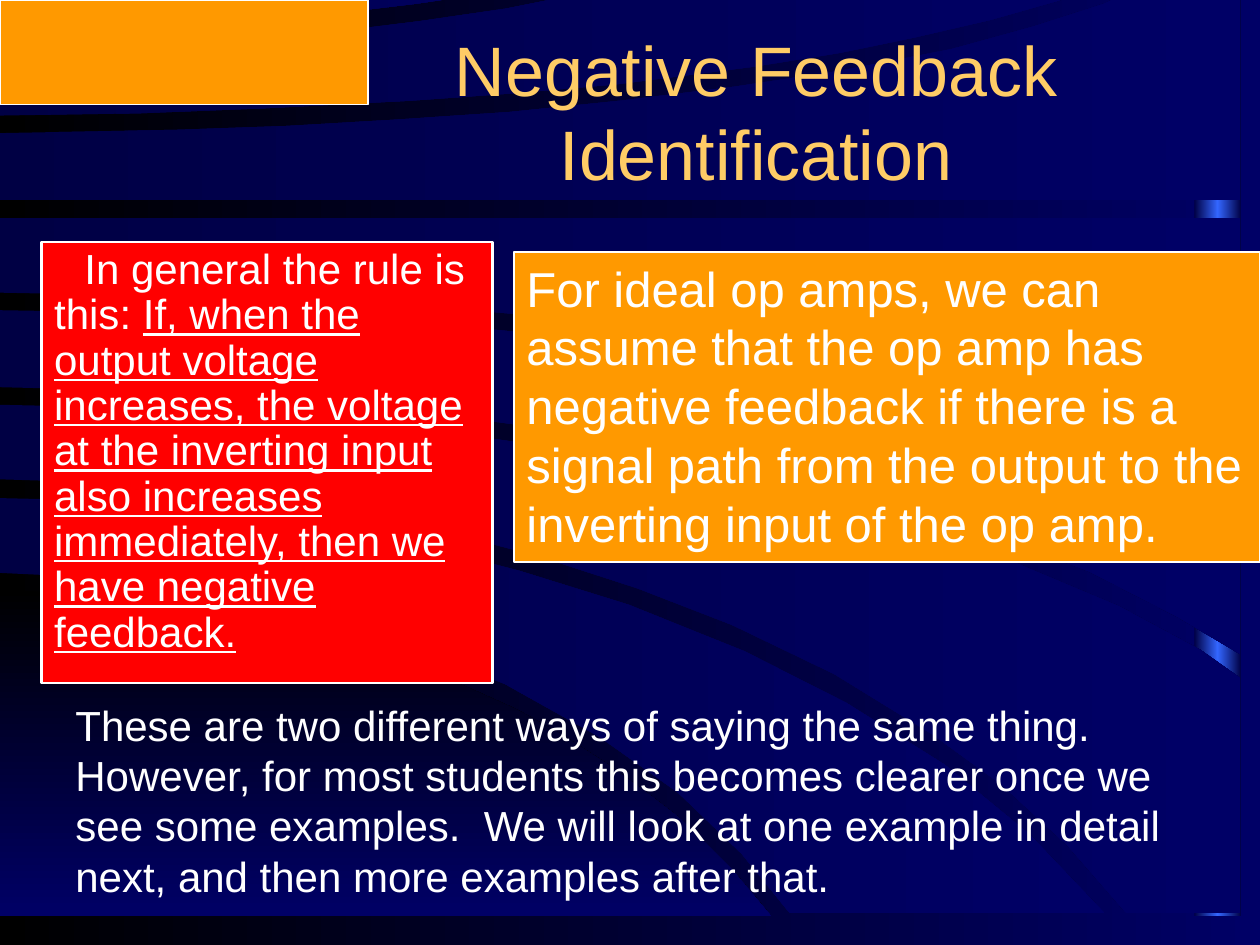
from copy import deepcopy

from pptx import Presentation
from pptx.dml.color import RGBColor
from pptx.enum.shapes import MSO_SHAPE
from pptx.enum.text import MSO_ANCHOR, MSO_AUTO_SIZE, PP_ALIGN
from pptx.oxml.ns import qn
from pptx.util import Inches, Pt

RECTANGLE = MSO_SHAPE.RECTANGLE
MIDDLE, TOP = MSO_ANCHOR.MIDDLE, MSO_ANCHOR.TOP
FIXED, GROW = MSO_AUTO_SIZE.NONE, MSO_AUTO_SIZE.SHAPE_TO_FIT_TEXT
CENTER, LEFT = PP_ALIGN.CENTER, PP_ALIGN.LEFT

BLACK = RGBColor(0x00, 0x00, 0x00)
NAVY = RGBColor(0x00, 0x00, 0x66)
DEEP_NAVY = RGBColor(0x00, 0x00, 0x44)
BLUE = RGBColor(0x33, 0x66, 0xFF)
ORANGE = RGBColor(0xFF, 0x99, 0x00)
RED = RGBColor(0xFF, 0x00, 0x00)
WHITE = RGBColor(0xFF, 0xFF, 0xFF)
GOLD = RGBColor(0xFF, 0xCC, 0x66)
FONT = "Arial"
DOWNWARD = 270  # gradient angles run counter-clockwise
UNITS = 100  # outline units per inch, which are whole numbers

# Content: each text is a list of (words, underlined)
TITLE = [("Negative Feedback Identification", False)]
RULE = [
    ("In general the rule is this: ", False),
    ("If, when the output voltage increases, the voltage at the inverting "
     "input also increases immediately, then we have negative feedback.", True),
]
IDEAL = [("For ideal op amps, we can assume that the op amp has negative "
          "feedback if there is a signal path from the output to the "
          "inverting input of the op amp.", False)]
CLOSING = [("These are two different ways of saying the same thing.  However, "
            "for most students this becomes clearer once we see some "
            "examples.  We will look at one example in detail next, and then "
            "more examples after that.", False)]

# Backdrop outlines, in inches; the arcs share a left, right, top and bottom edge
X0, X1, Y0, Y1 = -0.16, 9.84, -0.25, 7.25
CORNER = [(-0.17, 7.27), (-0.17, 4.68), (0.45, 4.7), (0.96, 4.74),
          (1.49, 4.82), (2.02, 4.91), (2.61, 5.06), (3.11, 5.22), (3.7, 5.45),
          (4.1, 5.63), (4.46, 5.83), (4.8, 6.05), (5.12, 6.28), (5.38, 6.48),
          (5.62, 6.71), (5.81, 6.9), (6.12, 7.27)]
ARCS = [
    [(X0, 3.95), (0.71, 3.97), (1.51, 4.03), (2.33, 4.14), (3.19, 4.29),
     (4.12, 4.53), (4.99, 4.8), (5.91, 5.17), (6.72, 5.58), (7.5, 6.07),
     (8.17, 6.62), (8.77, Y1), (6.27, Y1), (5.89, 6.78), (5.38, 6.29),
     (4.76, 5.85), (4.01, 5.43), (3.27, 5.13), (2.53, 4.89), (1.7, 4.7),
     (0.9, 4.59), (X0, 4.54)],
    [(X0, 3.21), (0.81, 3.23), (1.8, 3.28), (2.73, 3.35), (3.68, 3.45),
     (4.59, 3.58), (5.54, 3.76), (6.4, 3.95), (7.22, 4.17), (8.02, 4.45),
     (8.88, 4.81), (9.53, 5.16), (X1, 5.38), (X1, Y1), (8.94, Y1),
     (8.47, 6.71), (7.95, 6.23), (7.4, 5.83), (6.62, 5.35), (5.81, 4.96),
     (5.06, 4.67), (4.26, 4.41), (3.45, 4.2), (2.52, 4.02), (1.68, 3.91),
     (0.81, 3.83), (X0, 3.8)],
    [(X0, 2.46), (1.08, 2.48), (2.03, 2.51), (2.85, 2.55), (3.84, 2.61),
     (5.08, 2.73), (6.01, 2.83), (6.98, 2.97), (8.01, 3.15), (8.9, 3.33),
     (X1, 3.56), (X1, 5.19), (9.35, 4.9), (8.65, 4.54), (8.01, 4.29),
     (7.28, 4.04), (6.26, 3.77), (5.44, 3.59), (4.47, 3.42), (3.35, 3.27),
     (2.4, 3.18), (1.51, 3.11), (X0, 3.07)],
    [(X0, 1.73), (X1, 1.73), (X1, 3.42), (8.99, 3.2), (7.97, 2.99),
     (6.86, 2.81), (5.92, 2.68), (4.86, 2.56), (3.73, 2.46), (2.62, 2.4),
     (1.71, 2.36), (0.87, 2.34), (X0, 2.32)],
    [(X0, 1.06), (X0, 1.59), (X1, 1.59), (X1, Y0), (9.27, Y0), (9.04, -0.1),
     (8.76, 0.03), (8.2, 0.21), (7.55, 0.39), (6.68, 0.56), (5.82, 0.69),
     (4.92, 0.8), (4.04, 0.89), (3.14, 0.95), (2.28, 1), (1.42, 1.03)],
    [(X0, 0.39), (X0, 0.92), (1.1, 0.9), (2.1, 0.86), (3.25, 0.8),
     (4.09, 0.74), (4.89, 0.67), (5.98, 0.53), (6.67, 0.42), (7.25, 0.3),
     (7.86, 0.16), (8.39, 0.01), (8.67, -0.09), (9.02, Y0), (5.4, Y0),
     (4.66, -0.06), (4.01, 0.07), (3.32, 0.17), (2.51, 0.27), (1.81, 0.32),
     (1.05, 0.36), (0.33, 0.39)],
    [(X0, Y0), (X0, 0.24), (0.51, 0.24), (1.21, 0.21), (1.86, 0.18),
     (2.38, 0.14), (3.3, 0.03), (3.84, -0.05), (4.36, -0.15), (4.85, Y0)],
]


def paint_gradient(fill, colors, angle=0):
    fill.gradient()
    fill.gradient_angle = angle
    first = fill.gradient_stops[0]
    stop_list = first._gs.getparent()
    for _ in colors[2:]:
        stop_list.append(deepcopy(first._gs))
    for number, (stop, color) in enumerate(zip(fill.gradient_stops, colors)):
        stop.position = number / (len(colors) - 1)
        stop.color.rgb = color


def add_outline(page, points, colors, angle=0):
    corners = [(round(x * UNITS), round(y * UNITS)) for x, y in points]
    builder = page.shapes.build_freeform(*corners[0], scale=Inches(1) / UNITS)
    builder.add_line_segments(corners[1:], close=True)
    outline = builder.convert_to_shape()
    outline.shadow.inherit = False
    outline.line.fill.background()
    paint_gradient(outline.fill, colors, angle)


def add_rectangle(page, *place):
    box = page.shapes.add_shape(RECTANGLE, *map(Inches, place))
    box.shadow.inherit = False
    return box


def paint_box(box, color, line_width):
    box.fill.solid()
    box.fill.fore_color.rgb = color
    box.line.color.rgb = WHITE
    box.line.width = Pt(line_width)


def write(box, spans, size, color=WHITE, align=LEFT, anchor=TOP, fit=FIXED):
    frame = box.text_frame
    frame.word_wrap = True
    frame.auto_size = fit
    frame.vertical_anchor = anchor
    para = frame.paragraphs[0]
    para.alignment = align
    for words, underlined in spans:
        span = para.add_run()
        span.text = words
        span.font.name = FONT
        span.font.size = Pt(size)
        span.font.color.rgb = color
        span.font.underline = underlined
    return para


def place_on_top(page, holder, *place):
    holder.left, holder.top, holder.width, holder.height = map(Inches, place)
    page.shapes.element.append(holder.element)


deck = Presentation()
deck.slide_width, deck.slide_height = Inches(10), Inches(7.5)
page = deck.slides.add_slide(deck.slide_layouts[1])
title, body = page.placeholders[0], page.placeholders[1]

# Backdrop
paint_gradient(page.background.fill, [BLACK, NAVY])
glow = add_rectangle(page, 9.48, -0.23, 0.37, 7.5)
glow.line.fill.background()
paint_gradient(glow.fill, [DEEP_NAVY, BLUE, DEEP_NAVY])
add_outline(page, CORNER, [BLACK, NAVY], DOWNWARD)
for arc in ARCS:
    add_outline(page, arc, [DEEP_NAVY, NAVY])
paint_box(add_rectangle(page, 0, 0, 2.92, 0.83), ORANGE, 1)

# General rule
place_on_top(page, body, 0.33, 1.92, 3.58, 3.5)
paint_box(body, RED, 1.5)
rule = write(body, RULE, 24)
properties = rule._p.get_or_add_pPr()
properties.set("marL", "0")
properties.set("indent", str(Inches(0.24)))
properties.append(properties.makeelement(qn("a:buNone"), {}))
rule.line_spacing = 0.9
rule.space_before = Pt(0)

# Ideal op amps
ideal = add_rectangle(page, 4.08, 2, 5.92, 2.46)
paint_box(ideal, ORANGE, 1.5)
write(ideal, IDEAL, 28, fit=GROW)

# Closing remark
closing = page.shapes.add_textbox(*map(Inches, (0.5, 5.5, 9.02, 1.7)))
write(closing, CLOSING, 24, fit=GROW)

# Title
place_on_top(page, title, 2.75, 0.25, 6.5, 1.25)
write(title, TITLE, 40, GOLD, CENTER, MIDDLE)

deck.save("out.pptx")
